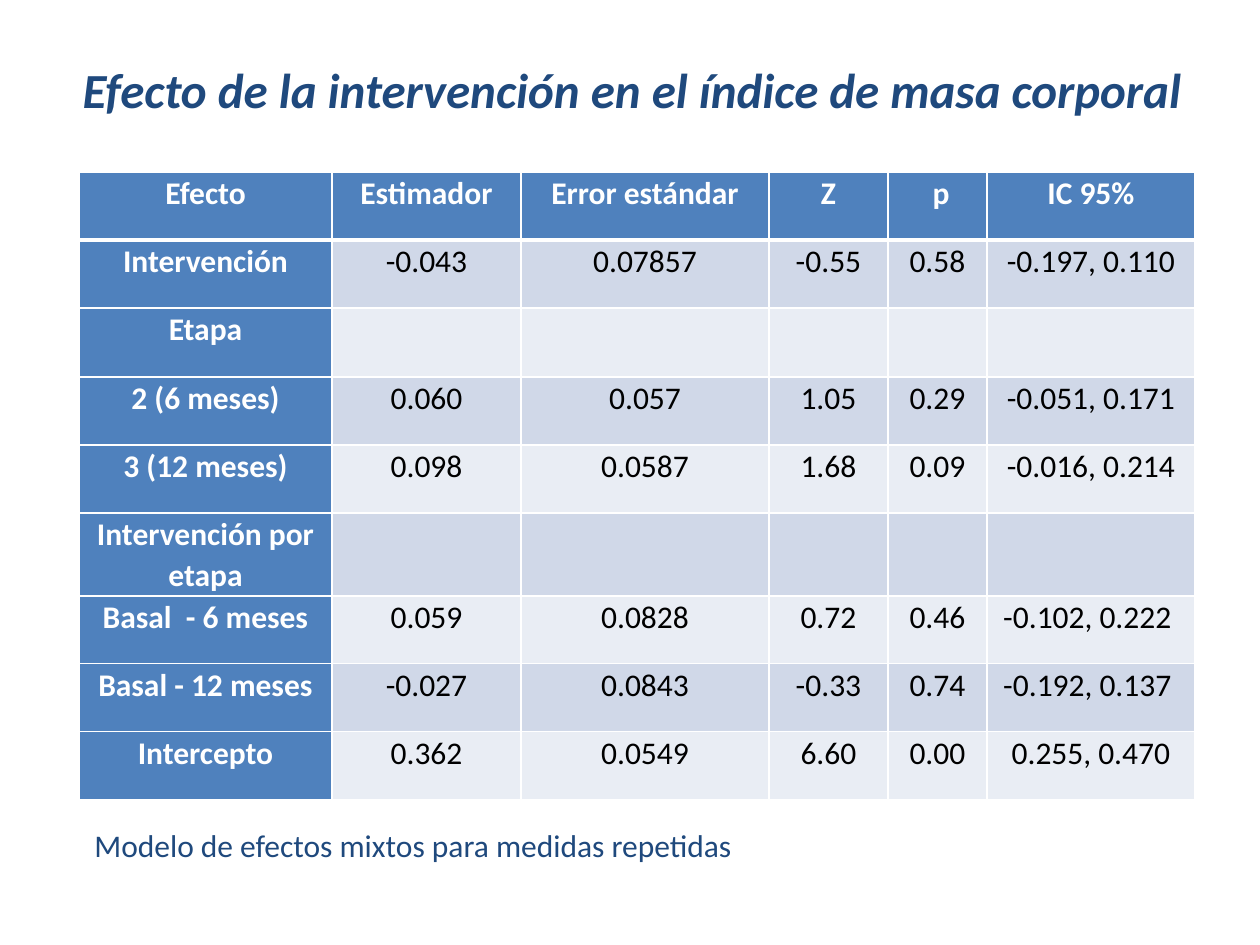
from lxml.etree import SubElement
from pptx import Presentation
from pptx.dml.color import RGBColor
from pptx.enum.text import MSO_ANCHOR, PP_ALIGN
from pptx.oxml.ns import qn
from pptx.util import Emu, Pt

PIXELS_PER_INCH = 126
NAVY = RGBColor(0x1F, 0x49, 0x7D)
BLUE = RGBColor(0x4F, 0x81, 0xBD)
BAND_DARK = RGBColor(0xD0, 0xD8, 0xE8)
BAND_LIGHT = RGBColor(0xE9, 0xED, 0xF4)
WHITE = RGBColor(0xFF, 0xFF, 0xFF)
BLACK = RGBColor(0x00, 0x00, 0x00)

TITLE_FONT = {"name": "Calibri", "size": Pt(28), "bold": True, "italic": True}
BODY_FONT = {"name": "Calibri", "size": Pt(18), "bold": False}
HEADING_FONT = {**BODY_FONT, "bold": True}
TITLE_FRAME = {"word_wrap": True, "vertical_anchor": MSO_ANCHOR.MIDDLE}
NOTE_FRAME = {"word_wrap": False}

COLUMN_WIDTHS = [253, 189, 248, 119, 99, 208]
ROW_HEIGHTS = [68, 68, 69, 68, 68, 83, 68, 68, 68]
EFFECT_ROWS = [
    ["Efecto", "Estimador", "Error estándar", "Z", " p", "IC 95%"],
    ["Intervención", "-0.043", "0.07857", "-0.55", "0.58", "-0.197, 0.110"],
    ["Etapa", "", "", "", "", ""],
    ["2 (6 meses)", "0.060", "0.057", "1.05", "0.29", "-0.051, 0.171"],
    ["3 (12 meses)", "0.098", "0.0587", "1.68", "0.09", "-0.016, 0.214"],
    ["Intervención por etapa", "", "", "", "", ""],
    ["Basal  - 6 meses", "0.059", "0.0828", "0.72", "0.46", "-0.102, 0.222 "],
    ["Basal - 12 meses", "-0.027", "0.0843", "-0.33", "0.74", "-0.192, 0.137 "],
    ["Intercepto", "0.362", "0.0549", "6.60", "0.00", "0.255, 0.470"],
]


def px(length):
    return Emu(round(length * 914400 / PIXELS_PER_INCH))


def set_attributes(target, values):
    for name, value in values.items():
        setattr(target, name, value)


def write_text(text_frame, text, font, color, alignment):
    paragraph = text_frame.paragraphs[0]
    paragraph.alignment = alignment
    run = paragraph.add_run()
    run.text = text
    set_attributes(run.font, font)
    run.font.color.rgb = color
    return paragraph


def add_text(slide, box, text, font, frame, alignment):
    shape = slide.shapes.add_textbox(*map(px, box))
    set_attributes(shape.text_frame, frame)
    write_text(shape.text_frame, text, font, NAVY, alignment)


def set_borders(cell, widths):
    properties = cell._tc.get_or_add_tcPr()
    for position, (side, width) in enumerate(widths.items()):
        line = SubElement(properties, qn(f"a:ln{side}"), w=str(Pt(width)))
        fill = SubElement(line, qn("a:solidFill"))
        SubElement(fill, qn("a:srgbClr"), val=str(WHITE))
        properties.insert(position, line)


def format_cell(cell, text, row_index, column_index):
    is_heading = row_index == 0 or column_index == 0
    band = BAND_DARK if row_index % 2 else BAND_LIGHT
    cell.fill.solid()
    cell.fill.fore_color.rgb = BLUE if is_heading else band
    set_attributes(cell, {
        "margin_left": px(9), "margin_right": px(9),
        "margin_top": 0, "margin_bottom": 0,
    })
    set_borders(cell, {
        "L": 1, "R": 1,
        "T": 3 if row_index == 1 else 1,
        "B": 3 if row_index == 0 else 1,
    })
    if text:
        font, color = (HEADING_FONT, WHITE) if is_heading else (BODY_FONT, BLACK)
        paragraph = write_text(cell.text_frame, text, font, color, PP_ALIGN.CENTER)
        paragraph.line_spacing = 1.07


def add_effect_table(slide, left, top):
    table = slide.shapes.add_table(
        len(EFFECT_ROWS), len(COLUMN_WIDTHS), px(left), px(top),
        px(sum(COLUMN_WIDTHS)), px(sum(ROW_HEIGHTS)),
    ).table
    table.first_col = True
    for column, width in zip(table.columns, COLUMN_WIDTHS):
        column.width = px(width)
    for row_index, (row, height) in enumerate(zip(table.rows, ROW_HEIGHTS)):
        row.height = px(height)
        for column_index, text in enumerate(EFFECT_ROWS[row_index]):
            format_cell(row.cells[column_index], text, row_index, column_index)


def main():
    presentation = Presentation()
    presentation.slide_width = px(1260)
    presentation.slide_height = px(945)
    slide = presentation.slides.add_slide(presentation.slide_layouts[6])
    add_text(slide, (65, 29, 1134, 120),
             "Efecto de la intervención en el índice de masa corporal",
             TITLE_FONT, TITLE_FRAME, PP_ALIGN.CENTER)
    add_effect_table(slide, 79, 172)
    add_text(slide, (82, 820, 678, 50),
             "Modelo de efectos mixtos para medidas repetidas",
             BODY_FONT, NOTE_FRAME, PP_ALIGN.LEFT)
    presentation.save("out.pptx")


if __name__ == "__main__":
    main()
